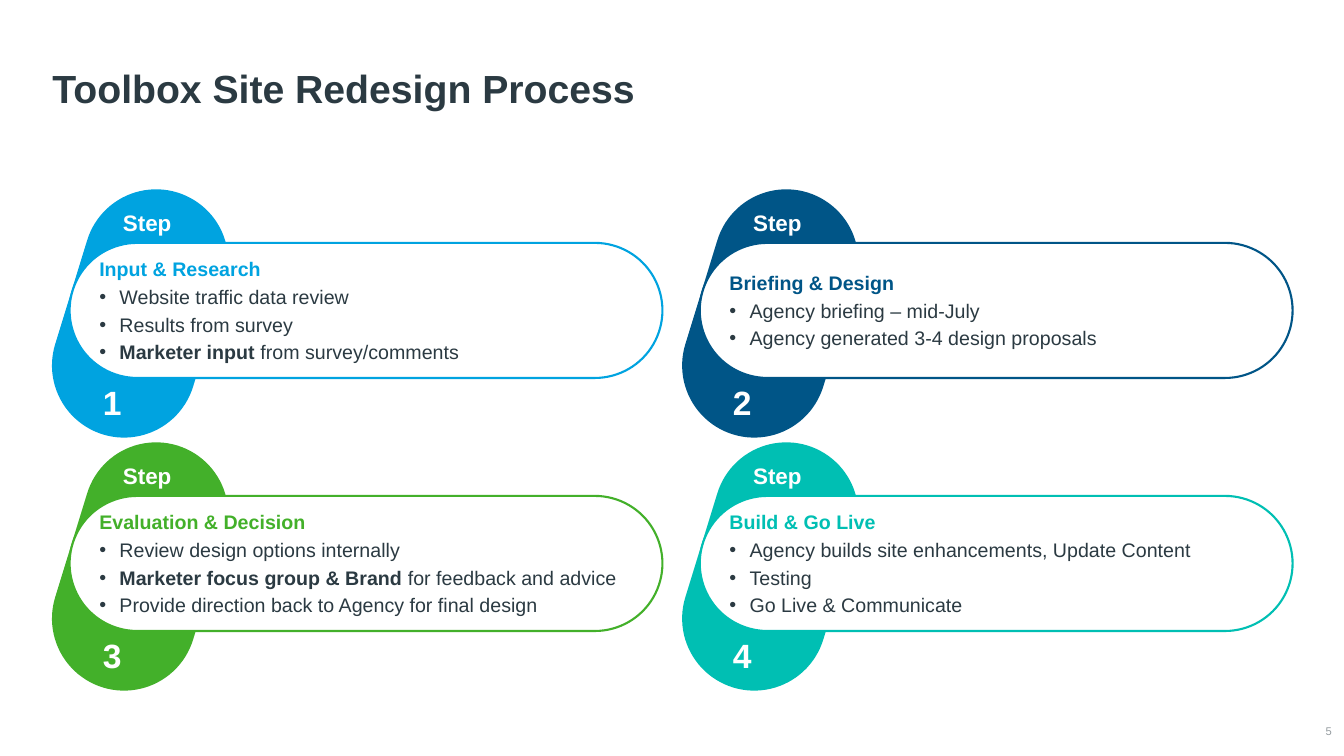
from lxml import etree
from pptx import Presentation
from pptx.dml.color import RGBColor
from pptx.enum.shapes import MSO_SHAPE
from pptx.enum.text import MSO_ANCHOR, MSO_AUTO_SIZE, PP_ALIGN
from pptx.oxml.ns import qn
from pptx.util import Inches, Pt

INK = RGBColor(0x2B, 0x3A, 0x42)
GREY = RGBColor(0x95, 0x9C, 0xA0)
WHITE = RGBColor(0xFF, 0xFF, 0xFF)
SKY = RGBColor(0x00, 0xA3, 0xE0)
NAVY = RGBColor(0x00, 0x55, 0x87)
GREEN = RGBColor(0x43, 0xB0, 0x2A)
TEAL = RGBColor(0x00, 0xBF, 0xB3)

GRID_LEFT, GRID_TOP = 0.69, 1.87
COLUMN_PITCH, ROW_PITCH = 6.25, 2.51
COLUMNS = 2
CARD_WIDTH, CARD_HEIGHT = 5.88, 1.34
INDENT = Inches(0.2)

# Each bullet is a (bold lead-in, plain text) pair.
STEPS = [
    (SKY, "Input & Research", [
        ("", "Website traffic data review"),
        ("", "Results from survey"),
        ("Marketer input ", "from survey/comments")]),
    (NAVY, "Briefing & Design", [
        ("", "Agency briefing – mid-July"),
        ("", "Agency generated 3-4 design proposals")]),
    (GREEN, "Evaluation & Decision", [
        ("", "Review design options internally"),
        ("Marketer focus group & Brand ", "for feedback and advice"),
        ("", "Provide direction back to Agency for final design")]),
    (TEAL, "Build & Go Live", [
        ("", "Agency builds site enhancements, Update Content"),
        ("", "Testing"),
        ("", "Go Live & Communicate")]),
]


def add_run(paragraph, text, size, color, bold=False):
    run = paragraph.add_run()
    run.text = text
    run.font.name = "Arial"
    run.font.size = Pt(size)
    run.font.bold = bold
    run.font.color.rgb = color


def add_pill(slide, left, top, width, height, fill, line, line_width):
    pill = slide.shapes.add_shape(MSO_SHAPE.ROUNDED_RECTANGLE, Inches(left),
                                  Inches(top), Inches(width), Inches(height))
    pill.adjustments[0] = 0.5
    pill.shadow.inherit = False
    pill.fill.solid()
    pill.fill.fore_color.rgb = fill
    pill.line.color.rgb = line
    pill.line.width = Pt(line_width)
    return pill


def add_label(slide, left, top, width, height, text, size):
    """Add white bold text that sits on the coloured pill."""
    label = slide.shapes.add_textbox(Inches(left), Inches(top),
                                     Inches(width), Inches(height))
    frame = label.text_frame
    frame.word_wrap = False
    frame.auto_size = MSO_AUTO_SIZE.SHAPE_TO_FIT_TEXT
    frame.margin_left = frame.margin_top = frame.margin_bottom = Inches(0.05)
    frame.margin_right = 0
    add_run(frame.paragraphs[0], text, size, WHITE, bold=True)


def make_bullet(paragraph):
    properties = paragraph._p.get_or_add_pPr()
    properties.set("marL", str(INDENT))
    properties.set("indent", str(-INDENT))
    etree.SubElement(properties, qn("a:buFont")).set("typeface", "Arial")
    etree.SubElement(properties, qn("a:buChar")).set("char", "•")


def add_card_text(card, color, heading, bullets):
    frame = card.text_frame
    frame.word_wrap = True
    frame.vertical_anchor = MSO_ANCHOR.MIDDLE
    add_run(frame.paragraphs[0], heading, 14, color, bold=True)
    for lead, text in bullets:
        paragraph = frame.add_paragraph()
        make_bullet(paragraph)
        if lead:
            add_run(paragraph, lead, 14, INK, bold=True)
        add_run(paragraph, text, 14, INK)
    for paragraph in frame.paragraphs:
        paragraph.alignment = PP_ALIGN.LEFT
        paragraph.space_after = Pt(3)


def add_step(slide, left, top, number, color, heading, bullets):
    badge = add_pill(slide, left, top, 1.4, 2.48, color, color, 2.25)
    badge.rotation = 17.1
    card = add_pill(slide, left, top + 0.54, CARD_WIDTH, CARD_HEIGHT,
                    WHITE, color, 1.5)
    add_card_text(card, color, heading, bullets)
    add_label(slide, left + 0.48, top + 0.16, 0.54, 0.37, "Step", 16)
    add_label(slide, left + 0.28, top + 1.87, 0.24, 0.5, str(number), 24)


def add_title(slide, text):
    title = slide.shapes.title
    title.left, title.top = Inches(0.42), Inches(0.32)
    title.width, title.height = Inches(12.4), Inches(0.84)
    title.text_frame.vertical_anchor = MSO_ANCHOR.BOTTOM
    paragraph = title.text_frame.paragraphs[0]
    paragraph.alignment = PP_ALIGN.LEFT
    paragraph.line_spacing = 0.9
    add_run(paragraph, text, 28, INK, bold=True)


def add_page_number(slide, number):
    box = slide.shapes.add_textbox(Inches(12.82), Inches(7.16),
                                   Inches(0.39), Inches(0.19))
    frame = box.text_frame
    frame.word_wrap = True
    frame.margin_left = frame.margin_right = 0
    frame.margin_top = frame.margin_bottom = 0
    frame.vertical_anchor = MSO_ANCHOR.MIDDLE
    frame.paragraphs[0].alignment = PP_ALIGN.RIGHT
    add_run(frame.paragraphs[0], str(number), 8, GREY)


def main():
    presentation = Presentation()
    presentation.slide_width = Inches(13.33)
    presentation.slide_height = Inches(7.5)
    slide = presentation.slides.add_slide(presentation.slide_layouts[5])
    add_title(slide, "Toolbox Site Redesign Process")
    for index, (color, heading, bullets) in enumerate(STEPS):
        row, column = divmod(index, COLUMNS)
        add_step(slide, GRID_LEFT + column * COLUMN_PITCH,
                 GRID_TOP + row * ROW_PITCH, index + 1, color, heading, bullets)
    add_page_number(slide, 5)
    presentation.save("out.pptx")


if __name__ == "__main__":
    main()
